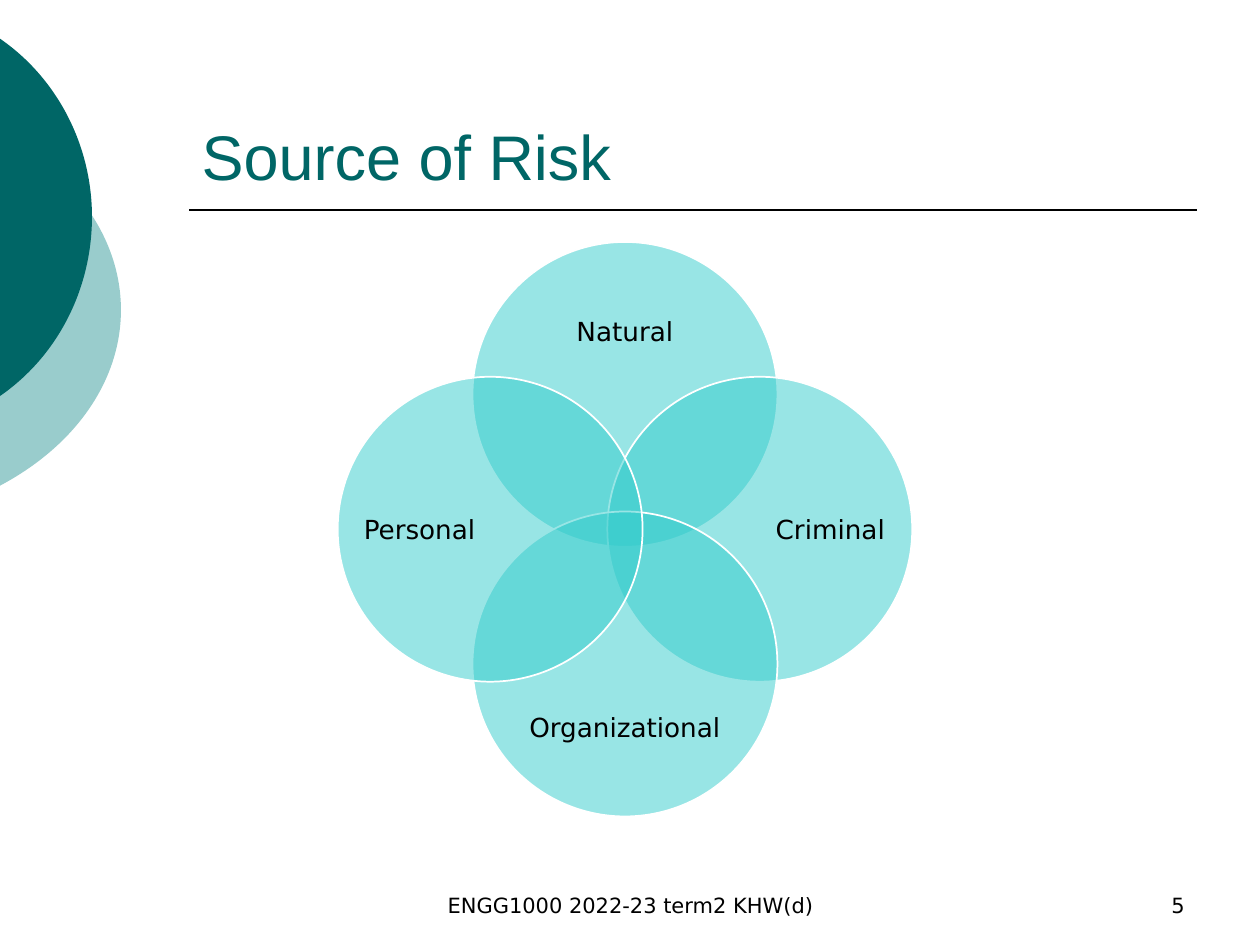
from lxml import etree
from pptx import Presentation
from pptx.dml.color import RGBColor
from pptx.enum.shapes import MSO_CONNECTOR, MSO_SHAPE
from pptx.enum.text import MSO_ANCHOR, PP_ALIGN
from pptx.oxml.ns import qn
from pptx.util import Inches, Pt

LEFT, CENTER, RIGHT = PP_ALIGN.LEFT, PP_ALIGN.CENTER, PP_ALIGN.RIGHT
BOTTOM, MIDDLE = MSO_ANCHOR.BOTTOM, MSO_ANCHOR.MIDDLE
TITLE_ONLY = 5

TITLE = ("Source of Risk", (1.5, 0.33, 8, 1.25))
RULE_Y = 5 / 3
FOOTERS = [
    ("5", (7.17, 6.83, 2.33, 0.5), RIGHT),
    ("ENGG1000 2022-23 term2 KHW(d)", (3.42, 6.83, 3.17, 0.5), CENTER),
]
RISKS = [("Natural", 0, -1), ("Criminal", 1, 0), ("Organizational", 0, 1), ("Personal", -1, 0)]
VENN_CENTER = (4.96, 4.2)
VENN_OFFSET = 1.07
DIAMETER = 2.42
LABEL_OFFSET_X, LABEL_OFFSET_Y = 1.63, 1.57
LABEL_LONG, LABEL_NARROW, LABEL_LOW = 1.86, 0.93, 0.77

EDGE_DISCS = [
    ("99CCCC", (-3.54, 0.75, 4.5, 3.42), (-0.01, 1.06), [
        [(0.6, 1.38), (0.96, 1.9), (0.96, 2.46)],
        [(0.96, 3.02), (0.6, 3.54), (-0.01, 3.86)],
    ]),
    ("006666", (-2.65, 0, 3.38, 3.45), (-0.01, 0.3), [
        [(0.46, 0.62), (0.73, 1.16), (0.73, 1.72)],
        [(0.73, 2.29), (0.46, 2.83), (-0.01, 3.15)],
    ]),
]


def color(hex_string):
    """Return the colour for a hex string."""
    return RGBColor.from_string(hex_string)


def box(bounds):
    """Convert bounds in inches to lengths."""
    return [Inches(value) for value in bounds]


def add_edge_disc(slide, fill, bounds, start, curves):
    """Draw a disc cut off by the left slide edge, with true curves."""
    left, top, width, height = box(bounds)
    builder = slide.shapes.build_freeform(*box(start))
    builder.add_line_segments([box(curve[-1]) for curve in curves], close=True)
    disc = builder.convert_to_shape()
    disc.left, disc.top, disc.width, disc.height = left, top, width, height

    outline = next(disc._element.iter(qn("a:path")))
    for child in list(outline):
        outline.remove(child)
    outline.set("w", str(width))
    outline.set("h", str(height))
    for command, points in [("moveTo", [start])] + [("cubicBezTo", curve) for curve in curves]:
        segment = etree.SubElement(outline, qn(f"a:{command}"))
        for x, y in points:
            etree.SubElement(segment, qn("a:pt"), x=str(Inches(x) - left), y=str(Inches(y) - top))
    etree.SubElement(outline, qn("a:close"))

    disc.shadow.inherit = False
    disc.fill.solid()
    disc.fill.fore_color.rgb = color(fill)
    disc.line.fill.background()


def add_title_rule(slide):
    """Draw the line under the title."""
    ends = box((1.5, RULE_Y, 9.5, RULE_Y))
    rule = slide.shapes.add_connector(MSO_CONNECTOR.STRAIGHT, *ends)
    rule.line.color.rgb = color("000000")
    rule.line.width = Pt(1)
    etree.SubElement(rule._element.spPr, qn("a:effectLst"))


def write(holder, text, align, anchor, size, font="DejaVu Sans", ink="000000", **frame_format):
    """Put formatted text into a shape."""
    frame = holder.text_frame
    for name, value in {"word_wrap": True, "vertical_anchor": anchor, **frame_format}.items():
        setattr(frame, name, value)
    frame.text = text
    paragraph = frame.paragraphs[0]
    paragraph.alignment = align
    for name, value in {"name": font, "size": Pt(size), "bold": False}.items():
        setattr(paragraph.font, name, value)
    paragraph.font.color.rgb = color(ink)


def add_risk(slide, text, dx, dy):
    """Draw one translucent Venn circle and its label."""
    center_x, center_y = VENN_CENTER
    left = center_x + dx * VENN_OFFSET - DIAMETER / 2
    top = center_y + dy * VENN_OFFSET - DIAMETER / 2
    circle = slide.shapes.add_shape(MSO_SHAPE.OVAL, *box((left, top, DIAMETER, DIAMETER)))
    circle.shadow.inherit = False
    circle.fill.solid()
    circle.fill.fore_color.rgb = color("33CCCC")
    tint = circle._element.spPr.find(qn("a:solidFill")).find(qn("a:srgbClr"))
    etree.SubElement(tint, qn("a:alpha"), val="50000")
    circle.line.color.rgb = color("FFFFFF")
    circle.line.width = Pt(1)

    width, height = (LABEL_NARROW, LABEL_LONG) if dx else (LABEL_LONG, LABEL_LOW)
    label_left = center_x + dx * LABEL_OFFSET_X - width / 2
    label_top = center_y + dy * LABEL_OFFSET_Y - height / 2
    label = slide.shapes.add_textbox(*box((label_left, label_top, width, height)))
    margins = {f"margin_{side}": 0 for side in ("left", "top", "right", "bottom")}
    write(label, text, CENTER, MIDDLE, 15, **margins)


def main():
    """Build and save the slide."""
    deck = Presentation()
    deck.slide_width, deck.slide_height = Inches(10), Inches(7.5)
    slide = deck.slides.add_slide(deck.slide_layouts[TITLE_ONLY])
    for disc in EDGE_DISCS:
        add_edge_disc(slide, *disc)
    add_title_rule(slide)

    heading, bounds = TITLE
    title = slide.shapes.title
    title.left, title.top, title.width, title.height = box(bounds)
    write(title, heading, LEFT, BOTTOM, 36, "Arial", "006666")

    for risk in RISKS:
        add_risk(slide, *risk)
    for text, bounds, align in FOOTERS:
        write(slide.shapes.add_textbox(*box(bounds)), text, align, BOTTOM, 12)
    deck.save("out.pptx")


if __name__ == "__main__":
    main()
